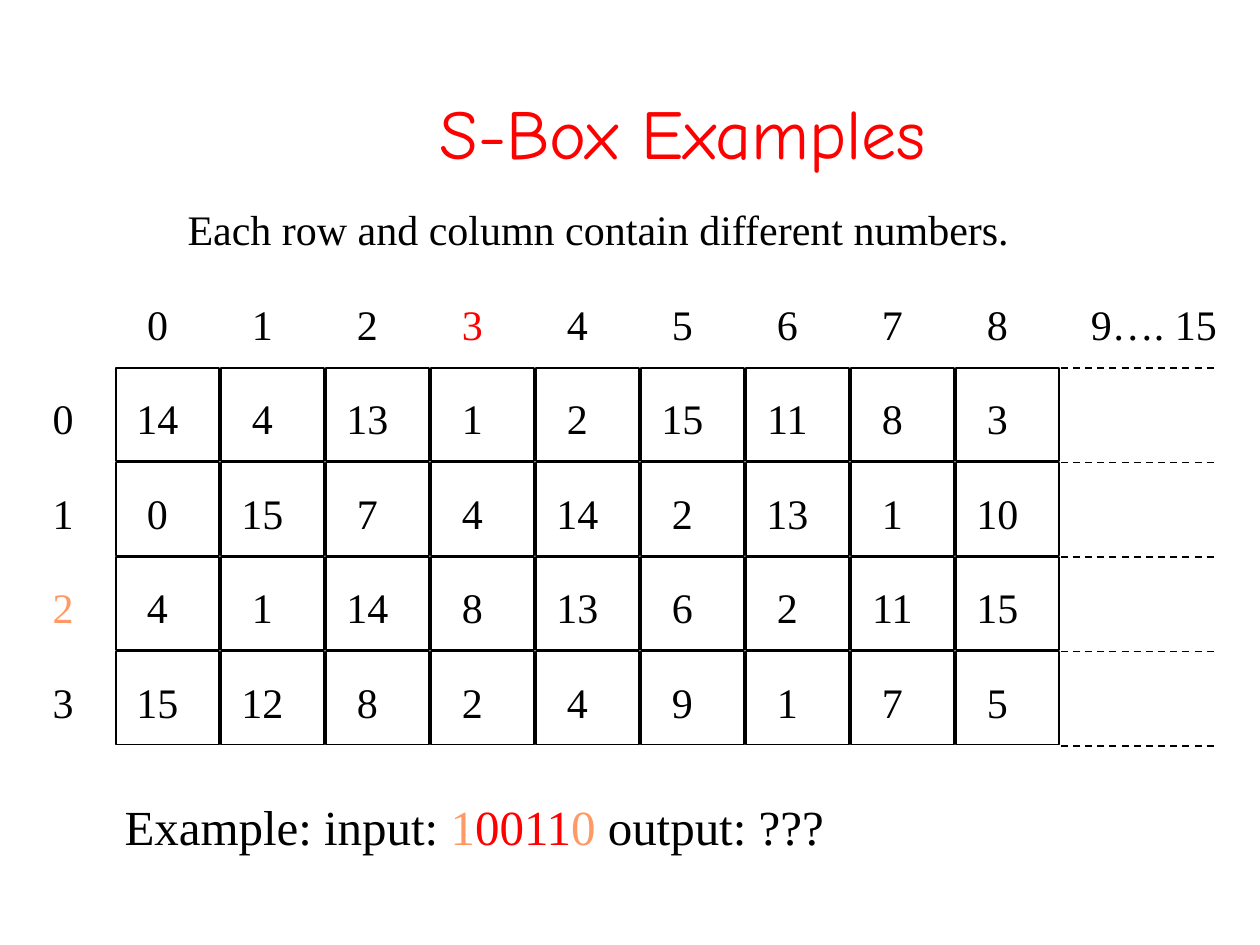
from dataclasses import dataclass

import lxml.etree
import pptx
import pptx.dml.color
import pptx.enum.dml
import pptx.enum.shapes
import pptx.enum.text
import pptx.oxml.ns
import pptx.util
from pptx.util import Inches


@dataclass(frozen=True)
class Theme:
    black: str = "000000"
    red: str = "FF0000"
    peach: str = "FF9966"
    head_font: str = "Comic Neue"
    text_font: str = "Times New Roman"
    head_size: int = 40
    text_size: int = 24
    large_size: int = 28
    line_width: int = 1


@dataclass(frozen=True)
class Bit:
    """A stretch of text in one colour."""
    text: str
    color: str = "000000"


@dataclass(frozen=True)
class Line:
    """A text line; centred tab stops are given from the slide's left edge."""
    left: float
    top: float
    width: float
    bits: tuple[Bit, ...]
    stops: tuple[float, ...] = ()
    size: int = 24
    height: float = 0.5


THEME = Theme()
INSET = 0.1

# Grid of cells
LEFT, TOP = 0.92, 2.92
COLS, ROWS = 9, 4
STEP_X, STEP_Y = 5 / 6, 0.75
CELL_W, CELL_H = 0.82, 0.74
DASH_FROM, DASH_TO = 8.42, 9.67

# Columns of numbers
STOPS = tuple(1.25 + col * STEP_X for col in range(COLS))
LAST_STOP = 9.16
LABEL_LEFT, LABEL_TOP = 0.32, 3.07
VALUES = (
    (14, 4, 13, 1, 2, 15, 11, 8, 3),
    (0, 15, 7, 4, 14, 2, 13, 1, 10),
    (4, 1, 14, 8, 13, 6, 2, 11, 15),
    (15, 12, 8, 2, 4, 9, 1, 7, 5),
)
PICKED_ROW = 2


def rgb(color: str) -> pptx.dml.color.RGBColor:
    return pptx.dml.color.RGBColor.from_string(color)


def style_run(run, font: str, size: int, color: str) -> None:
    run.font.name = font
    run.font.size = pptx.util.Pt(size)
    run.font.color.rgb = rgb(color)


def style_line(line) -> None:
    line.color.rgb = rgb(THEME.black)
    line.width = pptx.util.Pt(THEME.line_width)


def set_stops(para, stops: list[float]) -> None:
    tag = pptx.oxml.ns.qn
    tabs = lxml.etree.SubElement(para._p.get_or_add_pPr(), tag("a:tabLst"))
    for stop in stops:
        lxml.etree.SubElement(tabs, tag("a:tab"), pos=str(Inches(stop)), algn="ctr")


def draw_title(slide, text: str) -> None:
    title = slide.shapes.title
    title.left, title.top = Inches(1.17), Inches(0.42)
    title.width, title.height = Inches(8.5), Inches(1.25)
    frame = title.text_frame
    frame.text = text
    frame.vertical_anchor = pptx.enum.text.MSO_ANCHOR.MIDDLE
    para = frame.paragraphs[0]
    para.alignment = pptx.enum.text.PP_ALIGN.CENTER
    para.space_before, para.space_after = pptx.util.Pt(12), pptx.util.Pt(3)
    style_run(para.runs[0], THEME.head_font, THEME.head_size, THEME.red)


def draw_cell(slide, col: int, row: int) -> None:
    cell = slide.shapes.add_shape(
        pptx.enum.shapes.MSO_SHAPE.RECTANGLE,
        Inches(LEFT + col * STEP_X), Inches(TOP + row * STEP_Y),
        Inches(CELL_W), Inches(CELL_H))
    cell.shadow.inherit = False
    cell.fill.background()
    style_line(cell.line)


def draw_dash(slide, row: int) -> None:
    y = Inches(TOP + row * STEP_Y)
    dash = slide.shapes.add_connector(
        pptx.enum.shapes.MSO_CONNECTOR.STRAIGHT,
        Inches(DASH_FROM), y, Inches(DASH_TO), y)
    style_line(dash.line)
    dash.line.dash_style = pptx.enum.dml.MSO_LINE.DASH
    lxml.etree.SubElement(dash._element.spPr, pptx.oxml.ns.qn("a:effectLst"))


def draw_line(slide, line: Line) -> None:
    box = slide.shapes.add_textbox(
        Inches(line.left), Inches(line.top), Inches(line.width), Inches(line.height))
    box.text_frame.word_wrap = True
    para = box.text_frame.paragraphs[0]
    if line.stops:
        set_stops(para, [stop - line.left - INSET for stop in line.stops])
    for bit in line.bits:
        run = para.add_run()
        run.text = bit.text
        style_run(run, THEME.text_font, line.size, bit.color)


def main() -> None:
    deck = pptx.Presentation()
    deck.slide_width, deck.slide_height = Inches(10), Inches(7.5)
    slide = deck.slides.add_slide(deck.slide_layouts[5])
    draw_title(slide, "S-Box Examples")

    # Cells, and dashes for the columns left out
    for col in range(COLS):
        for row in range(ROWS):
            draw_cell(slide, col, row)
    for row in range(ROWS + 1):
        draw_dash(slide, row)

    # Column numbers
    draw_line(slide, Line(
        1.07, 2.32, 8.8,
        (Bit("0\t1\t2\t"), Bit("3", THEME.red), Bit("\t4\t5\t6\t7\t8\t9…. 15")),
        STOPS[1:] + (LAST_STOP,), THEME.text_size))

    # Row numbers and values
    for row, values in enumerate(VALUES):
        color = THEME.peach if row == PICKED_ROW else THEME.black
        body = "".join(f"\t{value}" for value in values)
        draw_line(slide, Line(
            LABEL_LEFT, LABEL_TOP + row * STEP_Y, 7.95,
            (Bit(str(row), color), Bit(body)), STOPS, THEME.text_size))

    # Remark above and example below
    draw_line(slide, Line(
        1.39, 1.57, 6.9, (Bit("Each row and column contain different numbers."),),
        size=THEME.text_size))
    draw_line(slide, Line(
        0.89, 6.27, 5.9,
        (Bit("Example: input: "), Bit("1", THEME.peach), Bit("0011", THEME.red),
         Bit("0", THEME.peach), Bit(" output: ???")),
        size=THEME.large_size, height=0.57))

    deck.save("out.pptx")


if __name__ == "__main__":
    main()
